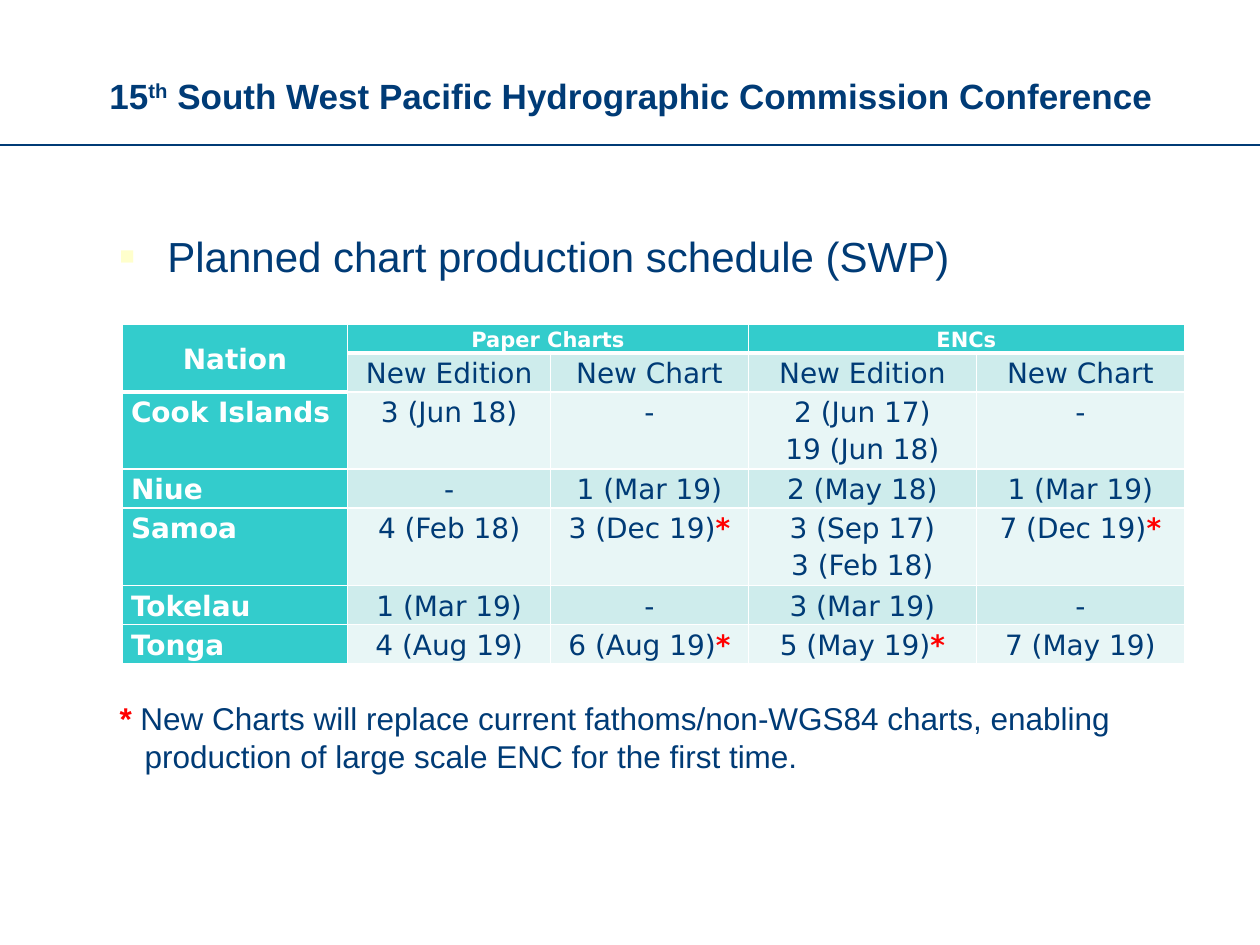
from lxml import etree
from pptx import Presentation
from pptx import util as u
from pptx.dml.color import RGBColor
from pptx.enum import shapes, text
from pptx.oxml.ns import qn

# Content: "*" marks a footnote, a tuple holds several lines of a cell
TITLE = [("15", {}), ("th", {"baseline": "30000"}),
         (" South West Pacific Hydrographic Commission Conference", {})]
HEADING = "Planned chart production schedule (SWP)"
NOTE = ("* New Charts will replace current fathoms/non-WGS84 charts, "
        "enabling production of large scale ENC for the first time.")
SCHEDULE = [
    ["Nation", "Paper Charts", "", "ENCs", ""],
    ["", "New Edition", "New Chart", "New Edition", "New Chart"],
    ["Cook Islands", "3 (Jun 18)", "-", ("2 (Jun 17)", "19 (Jun 18)"), "-"],
    ["Niue", "-", "1 (Mar 19)", "2 (May 18)", "1 (Mar 19)"],
    ["Samoa", "4 (Feb 18)", "3 (Dec 19)*", ("3 (Sep 17)", "3 (Feb 18)"), "7 (Dec 19)*"],
    ["Tokelau", "1 (Mar 19)", "-", "3 (Mar 19)", "-"],
    ["Tonga", "4 (Aug 19)", "6 (Aug 19)*", "5 (May 19)*", "7 (May 19)"],
]
MERGES = [((0, 0), (1, 0)), ((0, 1), (0, 2)), ((0, 3), (0, 4))]
COLUMN_WIDTHS = [1.79, 1.61, 1.57, 1.81, 1.65]
GROUP_HEIGHT, LINE_HEIGHT, PAIR_HEIGHT = 0.23, 0.31, 0.61

THEME = {
    "navy": "003B76", "white": "FFFFFF", "red": "FF0000", "bullet": "FFFFCC",
    "teal": "33CCCC", "bands": ["E8F6F6", "CEECEC"],
    "sans": "Arial", "table_font": "DejaVu Sans",
    "title": 20, "heading": 24, "note": 18, "group": 12, "cell": 16,
}


def rgb(name):
    return RGBColor.from_string(THEME.get(name, name))


def add_run(paragraph, words, size, color="navy", bold=False, font="sans"):
    run = paragraph.add_run()
    run.text = words
    run.font.color.rgb = rgb(color)
    formats = {"name": THEME[font], "size": u.Pt(THEME[size]), "bold": bold}
    for key, value in formats.items():
        setattr(run.font, key, value)
    return run


def add_starred(paragraph, words, size, **style):
    """Write words, with every footnote star in bold red."""
    for i, part in enumerate(words.split("*")):
        if i:
            add_run(paragraph, "*", size, **{**style, "color": "red", "bold": True})
        if part:
            add_run(paragraph, part, size, **style)


def add_textbox(slide, left, top, width, height, anchor=text.MSO_ANCHOR.TOP):
    frame = slide.shapes.add_textbox(*map(u.Inches, (left, top, width, height))).text_frame
    frame.word_wrap = True
    frame.vertical_anchor = anchor
    return frame.paragraphs[0]


def hang(paragraph, indent):
    props = paragraph._p.get_or_add_pPr()
    props.set("marL", str(u.Inches(indent)))
    props.set("indent", str(-u.Inches(indent)))
    return props


def add_bullet(props):
    color = etree.SubElement(props, qn("a:buClr"))
    etree.SubElement(color, qn("a:srgbClr"), val=THEME["bullet"])
    etree.SubElement(props, qn("a:buSzPct"), val="60000")
    etree.SubElement(props, qn("a:buFont"), typeface=THEME["sans"])
    etree.SubElement(props, qn("a:buChar"), char="■")


def set_borders(cell, bottom):
    props = cell._tc.get_or_add_tcPr()
    for i, (side, points) in enumerate([("L", 1), ("R", 1), ("T", 1), ("B", bottom)]):
        line = etree.Element(qn("a:ln" + side), w=str(u.Pt(points)))
        fill = etree.SubElement(line, qn("a:solidFill"))
        etree.SubElement(fill, qn("a:srgbClr"), val=THEME["white"])
        props.insert(i, line)


def fill_cell(cell, content, row, col):
    header = row == 0 or col == 0
    formats = {"margin_left": u.Inches(0.07), "margin_right": u.Inches(0.07),
               "margin_top": 0, "margin_bottom": 0}
    if (row, col) == (0, 0):
        formats["vertical_anchor"] = text.MSO_ANCHOR.MIDDLE
    for key, value in formats.items():
        setattr(cell, key, value)
    cell.fill.solid()
    cell.fill.fore_color.rgb = rgb("teal" if header else THEME["bands"][row % 2])
    set_borders(cell, 3 if row == 0 or (row, col) == (1, 0) else 1)

    lines = content if isinstance(content, tuple) else (content,)
    for i, words in enumerate(lines):
        paragraph = cell.text_frame.add_paragraph() if i else cell.text_frame.paragraphs[0]
        nation = col == 0 and row > 1
        paragraph.alignment = text.PP_ALIGN.LEFT if nation else text.PP_ALIGN.CENTER
        paragraph.line_spacing = 1.15
        add_starred(paragraph, words, "group" if row == 0 and col else "cell",
                    color="white" if header else "navy", bold=header, font="table_font")


def row_height(row, cells):
    if row == 0:
        return GROUP_HEIGHT
    return PAIR_HEIGHT if any(isinstance(c, tuple) for c in cells) else LINE_HEIGHT


def add_schedule(slide, left, top):
    heights = [row_height(r, cells) for r, cells in enumerate(SCHEDULE)]
    table = slide.shapes.add_table(
        len(SCHEDULE), len(COLUMN_WIDTHS), u.Inches(left), u.Inches(top),
        u.Inches(sum(COLUMN_WIDTHS)), u.Inches(sum(heights))).table
    for column, width in zip(table.columns, COLUMN_WIDTHS):
        column.width = u.Inches(width)
    for r, cells in enumerate(SCHEDULE):
        table.rows[r].height = u.Inches(heights[r])
        for c, content in enumerate(cells):
            fill_cell(table.cell(r, c), content, r, c)
    for first, last in MERGES:
        table.cell(*first).merge(table.cell(*last))


def main():
    deck = Presentation()
    deck.slide_width, deck.slide_height = u.Inches(10), u.Inches(7.5)
    slide = deck.slides.add_slide(deck.slide_layouts[6])

    # Title and the rule below it
    rule = slide.shapes.add_connector(
        shapes.MSO_CONNECTOR.STRAIGHT, 0, u.Inches(1.15), deck.slide_width, u.Inches(1.15))
    rule.line.color.rgb = rgb("navy")
    rule.line.width = u.Pt(0.75)
    etree.SubElement(rule._element.spPr, qn("a:effectLst"))
    title = add_textbox(slide, 0.51, 0.44, 9, 0.63, text.MSO_ANCHOR.MIDDLE)
    title.alignment = text.PP_ALIGN.CENTER
    for words, attributes in TITLE:
        run = add_run(title, words, "title", bold=True)
        for key, value in attributes.items():
            run.font._element.set(key, value)

    # Bulleted heading
    heading = add_textbox(slide, 0.85, 1.78, 8.19, 0.5)
    add_bullet(hang(heading, 0.38))
    add_run(heading, HEADING, "heading")

    # Production schedule and its footnote
    add_schedule(slide, 0.97, 2.57)
    note = add_textbox(slide, 0.85, 5.5, 8.19, 0.7)
    hang(note, 0.2)
    add_starred(note, NOTE, "note")

    deck.save("out.pptx")


if __name__ == "__main__":
    main()
